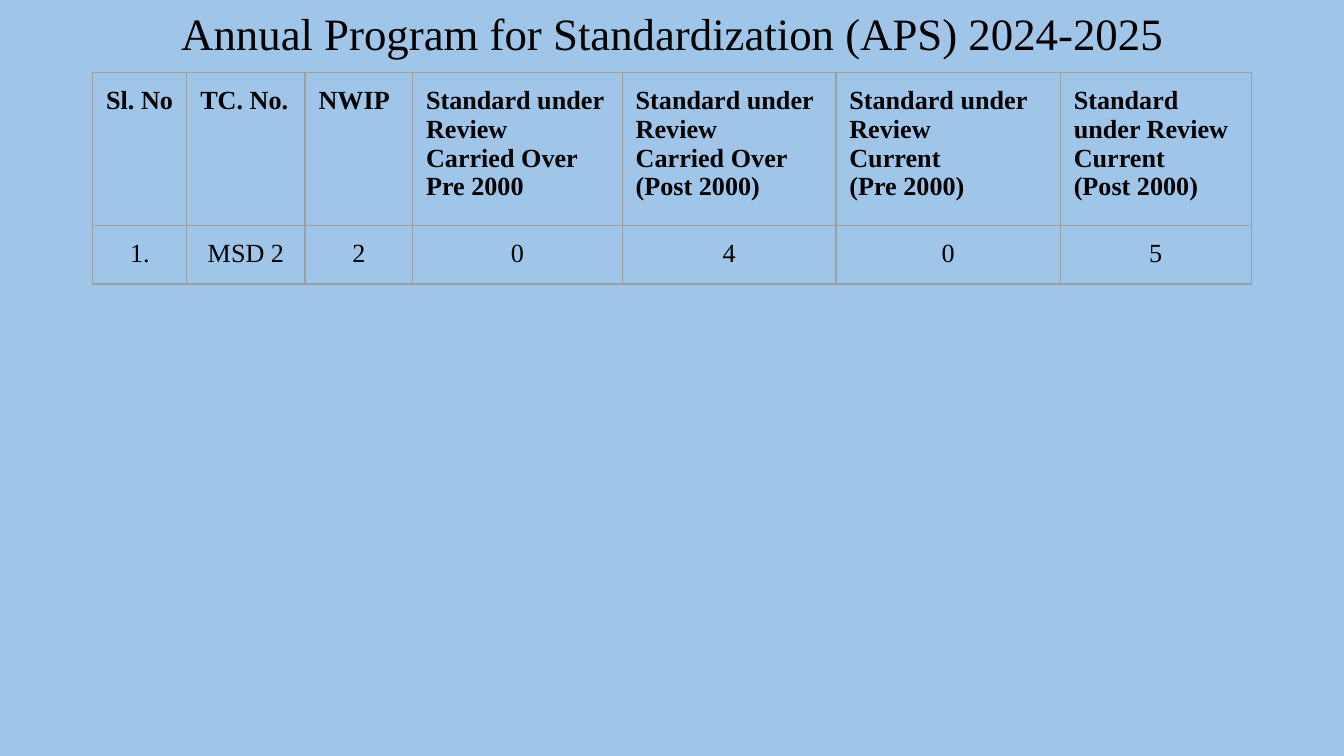
from dataclasses import dataclass

from lxml.etree import SubElement
from pptx import Presentation
from pptx.dml.color import RGBColor
from pptx.enum.text import MSO_ANCHOR as Anchor, PP_ALIGN as Align
from pptx.oxml.ns import qn
from pptx.slide import Slide
from pptx.util import Inches, Pt

SLIDE_WIDTH = 10
SLIDE_HEIGHT = SLIDE_WIDTH * 9 / 16
TITLE = "Annual Program for Standardization (APS) 2024-2025"
REVIEW = "Standard under Review"
COLUMNS = [
    ("Sl. No", "1.", 0.7),
    ("TC. No.", "MSD 2", 0.88),
    ("NWIP", "2", 0.8),
    (f"{REVIEW}\nCarried Over\nPre 2000", "0", 1.56),
    (f"{REVIEW}\nCarried Over\n(Post 2000)", "4", 1.59),
    (f"{REVIEW}\nCurrent\n(Pre 2000)", "0", 1.67),
    (f"{REVIEW}\nCurrent\n(Post 2000)", "5", 1.42),
]
ROW_HEIGHTS = [1.14, 0.41]


def rgb(value):
    return RGBColor.from_string(value)


@dataclass
class ProgramSlide:
    slide: Slide
    font: str = "Times New Roman"
    ink: str = "000000"
    border: str = "9E9E9E"
    backdrop: str = "9FC5E8"

    def background(self):
        fill = self.slide.background.fill
        fill.solid()
        fill.fore_color.rgb = rgb(self.backdrop)

    def style(self, paragraph, size, align, bold=False):
        paragraph.alignment = align
        paragraph.font.name = self.font
        paragraph.font.size = Pt(size)
        paragraph.font.bold = bold
        paragraph.font.color.rgb = rgb(self.ink)

    def title(self, text, left, top, width, height):
        box = self.slide.shapes.add_textbox(
            Inches(left), Inches(top), Inches(width), Inches(height))
        frame = box.text_frame
        frame.word_wrap = True
        frame.vertical_anchor = Anchor.MIDDLE
        frame.margin_left = frame.margin_right = Inches(0.07)
        frame.margin_top = frame.margin_bottom = Inches(0.04)
        frame.text = text
        heading = frame.paragraphs[0]
        heading.line_spacing = 0.9
        self.style(heading, 24, Align.CENTER)

    def outline(self, cell):
        """Draw a thin line on all four sides of a cell."""
        properties = cell._tc.get_or_add_tcPr()
        for side in ("a:lnL", "a:lnR", "a:lnT", "a:lnB"):
            line = SubElement(properties, qn(side), w=str(Pt(0.75)))
            fill = SubElement(line, qn("a:solidFill"))
            SubElement(fill, qn("a:srgbClr"), val=self.border)

    def cell(self, cell, text, is_header):
        self.outline(cell)
        cell.fill.background()
        cell.margin_left = cell.margin_right = Inches(0.1)
        cell.margin_top = cell.margin_bottom = Inches(0.1)
        cell.text = text
        align = Align.LEFT if is_header else Align.CENTER
        for paragraph in cell.text_frame.paragraphs:
            self.style(paragraph, 14, align, bold=is_header)

    def table(self, columns, row_heights, left, top):
        width = sum(column[-1] for column in columns)
        table = self.slide.shapes.add_table(
            len(row_heights), len(columns), Inches(left), Inches(top),
            Inches(width), Inches(sum(row_heights))).table
        table.horz_banding = False
        for row, height in zip(table.rows, row_heights):
            row.height = Inches(height)
        for index, (header, value, column_width) in enumerate(columns):
            table.columns[index].width = Inches(column_width)
            self.cell(table.cell(0, index), header, True)
            self.cell(table.cell(1, index), value, False)


def main():
    deck = Presentation()
    deck.slide_width = Inches(SLIDE_WIDTH)
    deck.slide_height = Inches(SLIDE_HEIGHT)
    program = ProgramSlide(deck.slides.add_slide(deck.slide_layouts[6]))
    program.background()
    program.title(TITLE, 0.69, 0, 8.62, 0.54)
    program.table(COLUMNS, ROW_HEIGHTS, 0.69, 0.54)
    deck.save("out.pptx")


if __name__ == "__main__":
    main()
